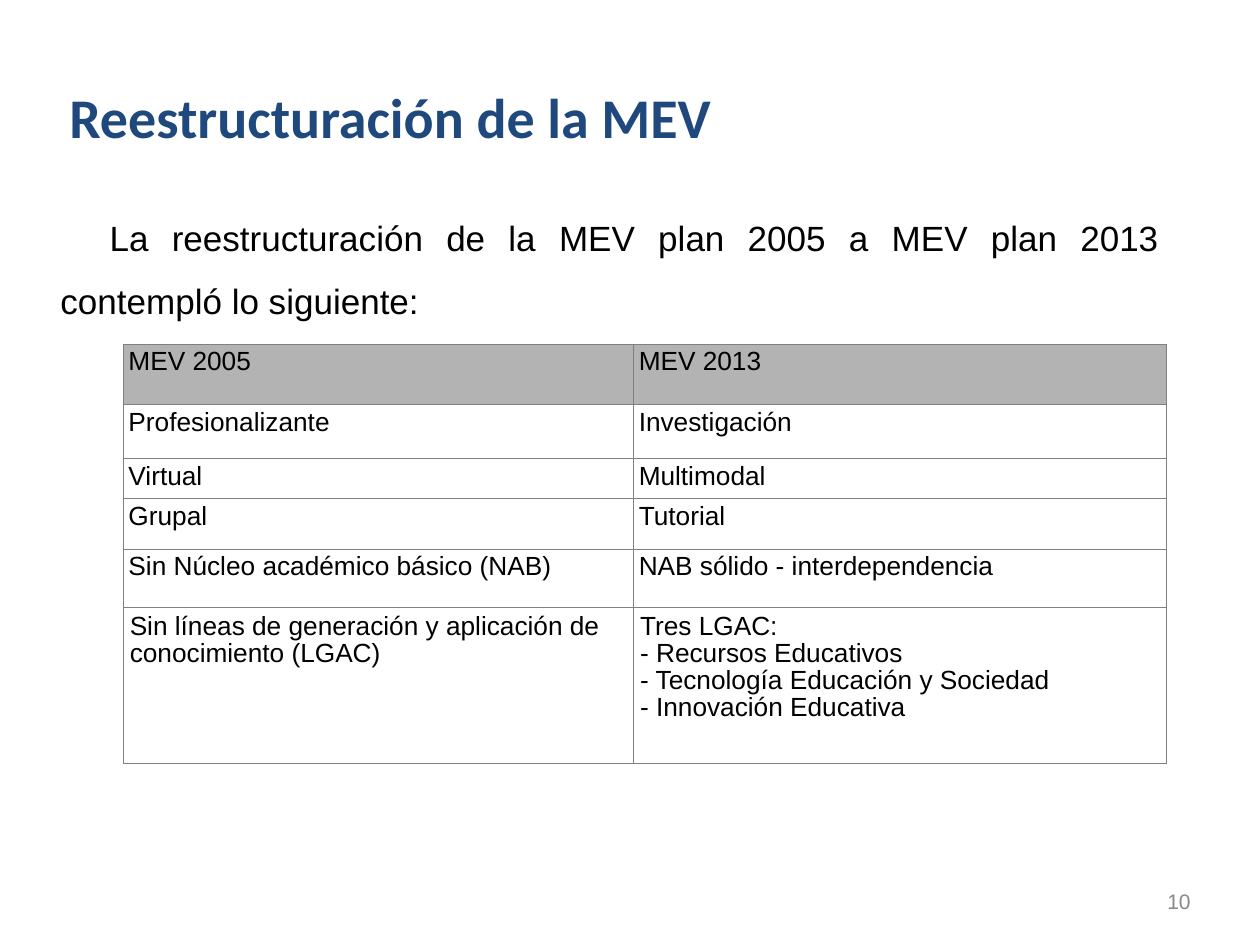
"""Build the slide comparing the 2005 and 2013 MEV plans."""
import pptx
import pptx.dml.color
import pptx.enum.text
import pptx.oxml
import pptx.oxml.ns
import pptx.util
from pptx.util import Inches

TITLE = "Reestructuración de la MEV"
INTRO = "La reestructuración de la MEV plan 2005 a MEV plan 2013 contempló lo siguiente:"
PAGE = "10"
ROWS = [
    (0.48, ["MEV 2005"], ["MEV 2013"]),
    (0.43, ["Profesionalizante"], ["Investigación"]),
    (0.32, ["Virtual"], ["Multimodal"]),
    (0.4, ["Grupal"], ["Tutorial"]),
    (0.46, ["Sin Núcleo académico básico (NAB)"], ["NAB sólido - interdependencia"]),
    (1.24, ["Sin líneas de generación y aplicación de conocimiento (LGAC)"],
     ["Tres LGAC:", "- Recursos Educativos", "- Tecnología Educación y Sociedad",
      "- Innovación Educativa"]),
]
COLS = [4.05, 4.23]
COLORS = {"title": "1F497D", "text": "000000", "page": "898989",
          "head": "B3B3B3", "body": "FFFFFF", "edge": "808080"}
ALIGN = pptx.enum.text.PP_ALIGN
ANCHOR = pptx.enum.text.MSO_ANCHOR


def shade(name):
    return pptx.dml.color.RGBColor.from_string(COLORS[name])


def write(para, text, size, color="text", face="Arial", bold=False):
    run = para.add_run()
    run.text = text
    font = run.font
    font.name, font.size, font.bold = face, pptx.util.Pt(size), bold
    font.color.rgb = shade(color)


def pad(item, gap):
    item.margin_left = item.margin_right = Inches(gap)
    item.margin_top = item.margin_bottom = Inches(gap)


def add_box(slide, place, align, anchor=ANCHOR.TOP):
    frame = slide.shapes.add_textbox(*map(Inches, place)).text_frame
    frame.word_wrap = True
    frame.vertical_anchor = anchor
    pad(frame, 0.05)
    para = frame.paragraphs[0]
    para.alignment = align
    return para


def add_edges(cell):
    props = cell._tc.get_or_add_tcPr()
    space = pptx.oxml.ns.nsdecls("a")
    for spot, side in enumerate("LRTB"):
        props.insert(spot, pptx.oxml.parse_xml(
            f'<a:ln{side} {space} w="7200"><a:solidFill>'
            f'<a:srgbClr val="{COLORS["edge"]}"/></a:solidFill></a:ln{side}>'))


def fill_cell(cell, lines, color, gap):
    pad(cell, gap)
    cell.fill.solid()
    cell.fill.fore_color.rgb = shade(color)
    add_edges(cell)
    frame = cell.text_frame
    for spot, line in enumerate(lines):
        para = frame.add_paragraph() if spot else frame.paragraphs[0]
        para.line_spacing = 0.93
        write(para, line, 15)


def add_plans(slide):
    size = sum(COLS), sum(row[0] for row in ROWS)
    table = slide.shapes.add_table(
        len(ROWS), len(COLS), *map(Inches, (0.98, 2.73, *size))).table
    for col, width in zip(table.columns, COLS):
        col.width = Inches(width)
    for r, (height, *cells) in enumerate(ROWS):
        table.rows[r].height = Inches(height)
        for c, lines in enumerate(cells):
            fill_cell(table.cell(r, c), lines, "body" if r else "head",
                      0.05 if r == len(ROWS) - 1 else 0.04)


def main():
    deck = pptx.Presentation()
    deck.slide_width, deck.slide_height = Inches(10), Inches(7.5)
    slide = deck.slides.add_slide(deck.slide_layouts[6])
    title = add_box(slide, (0.5, 0.61, 6.51, 1.64), ALIGN.LEFT)
    write(title, TITLE, 32, "title", "Calibri", True)
    page = add_box(slide, (7.17, 7.01, 2.33, 0.29), ALIGN.RIGHT, ANCHOR.MIDDLE)
    write(page, PAGE, 12, "page")
    intro = add_box(slide, (0.43, 1.5, 8.82, 0.89), ALIGN.JUSTIFY)
    intro.line_spacing = 1.5
    intro._p.get_or_add_pPr().set("indent", str(Inches(0.39)))
    write(intro, INTRO, 20)
    add_plans(slide)
    deck.save("out.pptx")


if __name__ == "__main__":
    main()
